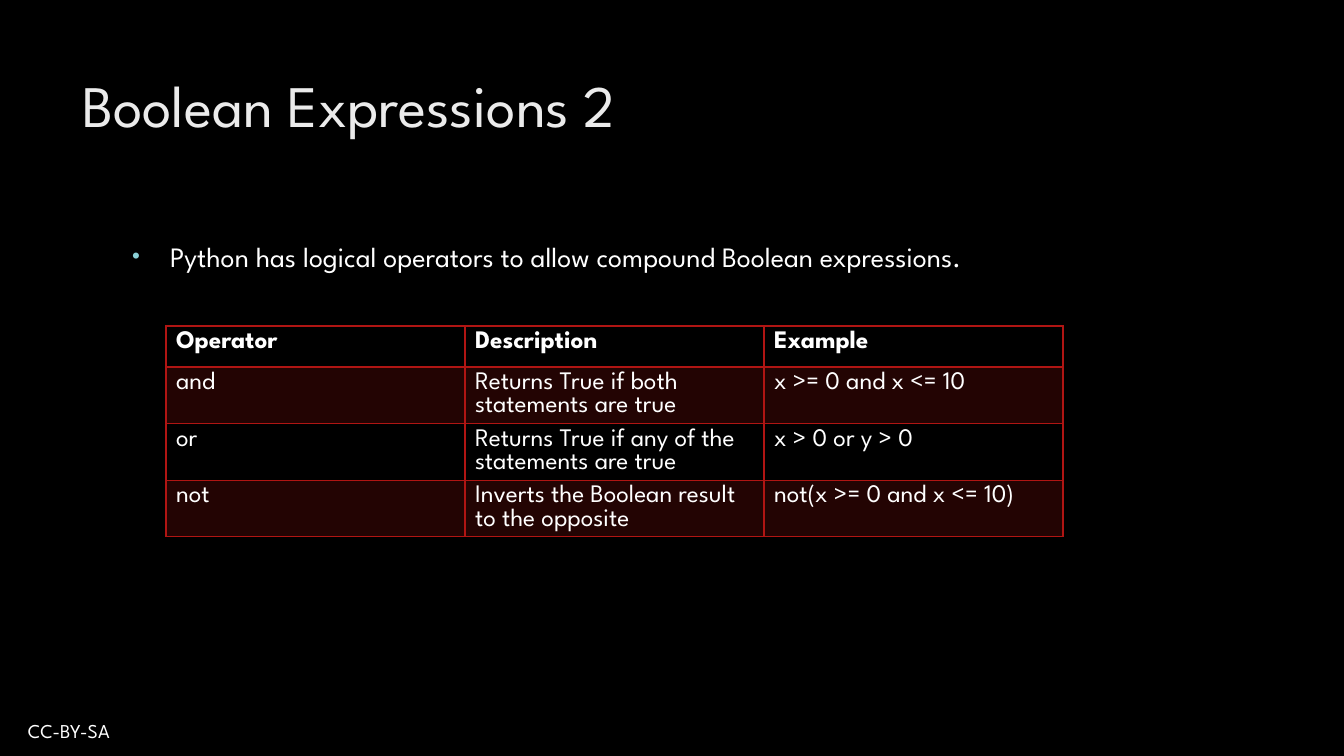
from lxml.etree import SubElement
from pptx import Presentation
from pptx.dml.color import RGBColor
from pptx.enum.text import MSO_ANCHOR as Anchor, MSO_AUTO_SIZE as AutoSize, PP_ALIGN as Align
from pptx.oxml import parse_xml
from pptx.oxml.ns import nsdecls, qn
from pptx.util import Pt

SCALE = 914400 / 100.8
COLORS = {"background": "000000", "title": "EBEBEB", "text": "FFFFFF",
          "bullet": "8AD0D6", "table": "B01513"}
OPERATORS = [
    ("Operator", "Description", "Example"),
    ("and", "Returns True if both statements are true", "x >= 0 and x <= 10"),
    ("or", "Returns True if any of the statements are true", "x > 0 or y > 0"),
    ("not", "Inverts the Boolean result to the opposite", "not(x >= 0 and x <= 10)"),
]


def px(length):
    return round(length * SCALE)


def color(name):
    return RGBColor.from_string(COLORS[name])


def write(frame, text, *, size, ink="text", bold=False, bullet=False, font="League Spartan"):
    para = frame.paragraphs[0]
    para.alignment = Align.LEFT
    para.space_before = Pt(0)
    if bullet:
        props = para._p.get_or_add_pPr()
        props.set("marL", str(px(38)))
        props.set("indent", str(px(-38)))
        tint = SubElement(props, qn("a:buClr"))
        SubElement(tint, qn("a:srgbClr"), val=COLORS["bullet"])
        SubElement(props, qn("a:buSzPct"), val="80000")
        SubElement(props, qn("a:buFont"), typeface="Arial")
        SubElement(props, qn("a:buChar"), char="•")
    span = para.add_run()
    span.text = text
    span.font.name = font
    span.font.size = Pt(size)
    span.font.bold = bold
    span.font.color.rgb = color(ink)


class SlideBuilder:
    def __init__(self, deck):
        self.page = deck.slides.add_slide(deck.slide_layouts[1])
        fill = self.page.background.fill
        fill.solid()
        fill.fore_color.rgb = color("background")

    def fill_box(self, box, place, text, top_inset=5, anchor=Anchor.TOP, **style):
        box.left, box.top, box.width, box.height = map(px, place)
        frame = box.text_frame
        frame.word_wrap = True
        frame.auto_size = AutoSize.NONE
        frame.vertical_anchor = anchor
        frame.margin_top = px(top_inset)
        write(frame, text, **style)

    def placeholder(self, index, place, text, **style):
        self.fill_box(self.page.placeholders[index], place, text, **style)

    def label(self, place, text, **style):
        box = self.page.shapes.add_textbox(0, 0, 0, 0)
        self.fill_box(box, place, text, anchor=Anchor.MIDDLE, **style)

    def border(self, cell, sides):
        props = cell._tc.get_or_add_tcPr()
        for position, (side, points) in enumerate(sides.items()):
            props.insert(position, parse_xml(
                f'<a:ln{side} {nsdecls("a")} w="{Pt(points)}"><a:solidFill>'
                f'<a:srgbClr val="{COLORS["table"]}"/></a:solidFill></a:ln{side}>'))

    def table(self, left, top, column_width, row_height, rows):
        columns = len(rows[0])
        grid = self.page.shapes.add_table(
            len(rows), columns, px(left), px(top),
            px(column_width * columns), px(row_height * len(rows))).table
        grid.first_row = grid.horz_banding = False
        for r, row in enumerate(rows):
            for c, text in enumerate(row):
                cell = grid.cell(r, c)
                write(cell.text_frame, text, size=18, bold=r == 0)
                if r % 2:
                    cell.fill.solid()
                    cell.fill.fore_color.rgb = color("table")
                    tint = cell._tc.tcPr.find(".//" + qn("a:srgbClr"))
                    SubElement(tint, qn("a:alpha"), val="20000")
                else:
                    cell.fill.background()
                self.border(cell, {"L": 1, "R": 1, "T": 2 if r == 1 else 1,
                                   "B": 2 if r == 0 else 1})


def main():
    deck = Presentation()
    deck.slide_width, deck.slide_height = px(1344), px(756)
    slide = SlideBuilder(deck)

    # Licence label
    slide.label((18, 714, 572, 34), "CC-BY-SA", size=14)

    # Title and statement
    slide.placeholder(0, (72, 50, 1037, 154), "Boolean Expressions 2",
                      size=42, ink="title", top_inset=19)
    slide.placeholder(1, (122, 227, 986, 101),
                      "Python has logical operators to allow compound Boolean expressions.",
                      size=20, bullet=True, top_inset=12)

    # Operator table
    slide.table(166, 326, 299, 41, OPERATORS)

    deck.save("out.pptx")


if __name__ == "__main__":
    main()
